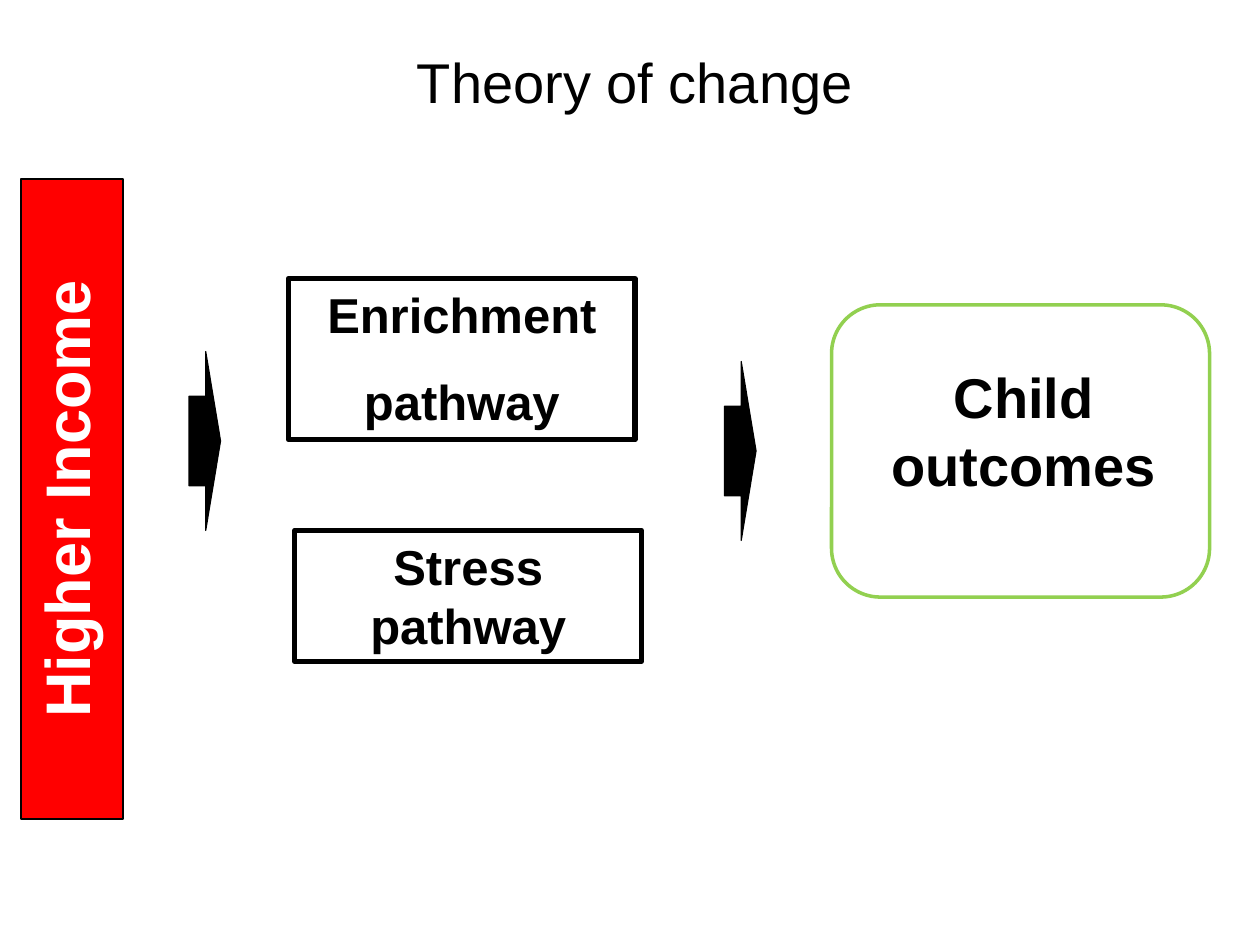
from pptx import Presentation
from pptx.dml.color import RGBColor
from pptx.enum.shapes import MSO_SHAPE
from pptx.enum.text import MSO_ANCHOR, PP_ALIGN
from pptx.util import Pt

RECTANGLE = MSO_SHAPE.RECTANGLE
ROUNDED = MSO_SHAPE.ROUNDED_RECTANGLE
ARROW = MSO_SHAPE.RIGHT_ARROW
TOP, MIDDLE = MSO_ANCHOR.TOP, MSO_ANCHOR.MIDDLE
CENTER = PP_ALIGN.CENTER

BLACK = RGBColor(0x00, 0x00, 0x00)
WHITE = RGBColor(0xFF, 0xFF, 0xFF)
RED = RGBColor(0xFF, 0x00, 0x00)
GREEN = RGBColor(0x92, 0xD0, 0x50)
FONT = "Arial"

# Boxes are (left, top, width, height) in points.
TITLE = ("Theory of change", (38.9, 23.8, 648, 44.6))
INCOME = ("Higher Income", (12.2, 102.2, 58.3, 365.8))
OUTCOME = ("Child outcomes", (468, 203.8, 234, 85))
OUTCOME_FRAME = (475.2, 174.2, 216, 167)
PATHWAYS = [
    (["Stress pathway"], (168.5, 303.1, 198, 74.9)),
    (["Enrichment", "pathway"], (164.9, 159.1, 198, 92.2)),
]
ARROW_POSITIONS = [(108, 200.9), (414, 206.6)]
ARROW_SIZE = (18, 102.2)


def add_box(slide, kind, box, line, line_width, fill=None):
    shape = slide.shapes.add_shape(kind, *map(Pt, box))
    shape.shadow.inherit = False
    if fill is None:
        shape.fill.background()
    else:
        shape.fill.solid()
        shape.fill.fore_color.rgb = fill
    shape.line.color.rgb = line
    shape.line.width = Pt(line_width)
    return shape


def write_text(shape, lines, size, color=BLACK, bold=True, anchor=TOP, gap=16):
    frame = shape.text_frame
    frame.word_wrap = True
    frame.vertical_anchor = anchor
    for index, line in enumerate(lines):
        paragraph = frame.add_paragraph() if index else frame.paragraphs[0]
        paragraph.alignment = CENTER
        if index:
            paragraph.space_before = Pt(gap)
        run = paragraph.add_run()
        run.text = line
        run.font.name = FONT
        run.font.size = Pt(size)
        run.font.bold = bold
        run.font.color.rgb = color


def main():
    presentation = Presentation()
    presentation.slide_width, presentation.slide_height = Pt(720), Pt(540)
    slide = presentation.slides.add_slide(presentation.slide_layouts[6])

    text, box = TITLE
    title = slide.shapes.add_textbox(*map(Pt, box))
    write_text(title, [text], 32, bold=False, anchor=MIDDLE)

    text, box = INCOME
    income = add_box(slide, RECTANGLE, box, BLACK, 1, fill=RED)
    write_text(income, [text], 36, color=WHITE)
    income.text_frame._txBody.bodyPr.set("vert", "vert270")

    for lines, box in PATHWAYS:
        pathway = add_box(slide, RECTANGLE, box, BLACK, 3)
        write_text(pathway, lines, 28)

    text, box = OUTCOME
    outcome = slide.shapes.add_textbox(*map(Pt, box))
    write_text(outcome, [text], 32)
    add_box(slide, ROUNDED, OUTCOME_FRAME, GREEN, 2)

    for position in ARROW_POSITIONS:
        arrow = add_box(slide, ARROW, position + ARROW_SIZE, BLACK, 0.75, fill=BLACK)
        arrow.adjustments[0] = 0.5
        arrow.adjustments[1] = 0.47

    presentation.save("out.pptx")


if __name__ == "__main__":
    main()
